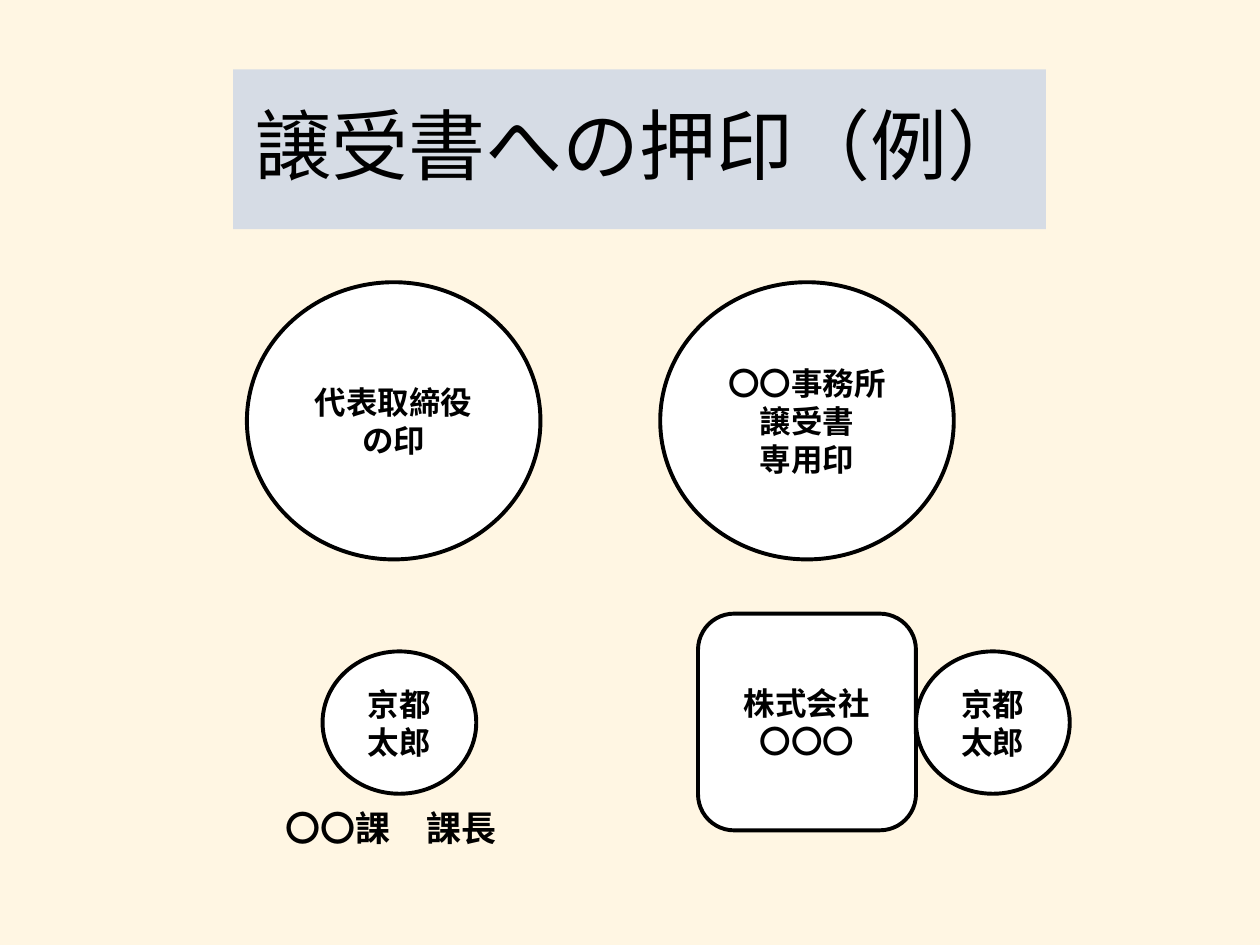
from pptx import Presentation
from pptx.dml.color import RGBColor
from pptx.enum import shapes, text
from pptx.util import Inches, Pt

COLORS = {"page": "FFF6E3", "banner": "D6DCE5", "seal": "FFFFFF", "ink": "000000"}
KINDS = shapes.MSO_SHAPE


class SealPage:
    """Draws seals and captions in one style on the current slide."""

    def __init__(self, deck):
        self.page = deck.slides.add_slide(deck.slide_layouts[6])
        self.paint(self.page.background.fill, "page")

    def paint(self, fill, color):
        fill.solid()
        fill.fore_color.rgb = RGBColor.from_string(COLORS[color])

    def letter(self, box, lines, size, font="Calibri", bold=True, align=None, spacing=None):
        frame = box.text_frame
        frame.text = "\n".join(lines)
        for para in frame.paragraphs:
            para.alignment = align
            para.line_spacing = spacing
            para.font.name = font
            para.font.size = Pt(size)
            para.font.bold = bold
            para.font.color.rgb = RGBColor.from_string(COLORS["ink"])

    def shape(self, kind, left, top, width, height, color):
        box = self.page.shapes.add_shape(
            kind, Inches(left), Inches(top), Inches(width), Inches(height))
        box.shadow.inherit = False
        self.paint(box.fill, color)
        box.text_frame.word_wrap = True
        box.text_frame.vertical_anchor = text.MSO_ANCHOR.MIDDLE
        return box

    def banner(self, left, top, width, height, title):
        box = self.shape(KINDS.RECTANGLE, left, top, width, height, "banner")
        box.line.fill.background()
        self.letter(box, [title], 44, "Noto Sans CJK JP", False, text.PP_ALIGN.CENTER, 0.9)

    def seal(self, left, top, width, height, lines, kind=KINDS.OVAL):
        box = self.shape(kind, left, top, width, height, "seal")
        box.line.color.rgb = RGBColor.from_string(COLORS["ink"])
        box.line.width = Pt(2.25)
        self.letter(box, lines, 18, align=text.PP_ALIGN.CENTER)

    def caption(self, left, top, width, height, line):
        box = self.page.shapes.add_textbox(
            Inches(left), Inches(top), Inches(width), Inches(height))
        box.text_frame.word_wrap = False
        box.text_frame.auto_size = text.MSO_AUTO_SIZE.SHAPE_TO_FIT_TEXT
        self.letter(box, [line], 20)


def main():
    deck = Presentation()
    deck.slide_width, deck.slide_height = Inches(10), Inches(7.5)
    sheet = SealPage(deck)
    sheet.banner(1.85, 0.55, 6.45, 1.27, "譲受書への押印（例）")
    office_seals = {1.96: ["代表取締役", "の印"], 5.24: ["〇〇事務所", "譲受書", "専用印"]}
    for left, lines in office_seals.items():
        sheet.seal(left, 2.24, 2.33, 2.2, lines)
    for left in (2.56, 7.27):
        sheet.seal(left, 5.17, 1.22, 1.13, ["京都", "太郎"])
    sheet.seal(5.54, 4.87, 1.73, 1.72, ["株式会社", "〇〇〇"], KINDS.ROUNDED_RECTANGLE)
    sheet.caption(2.17, 6.35, 1.88, 0.44, "〇〇課　課長")
    deck.save("out.pptx")


if __name__ == "__main__":
    main()
